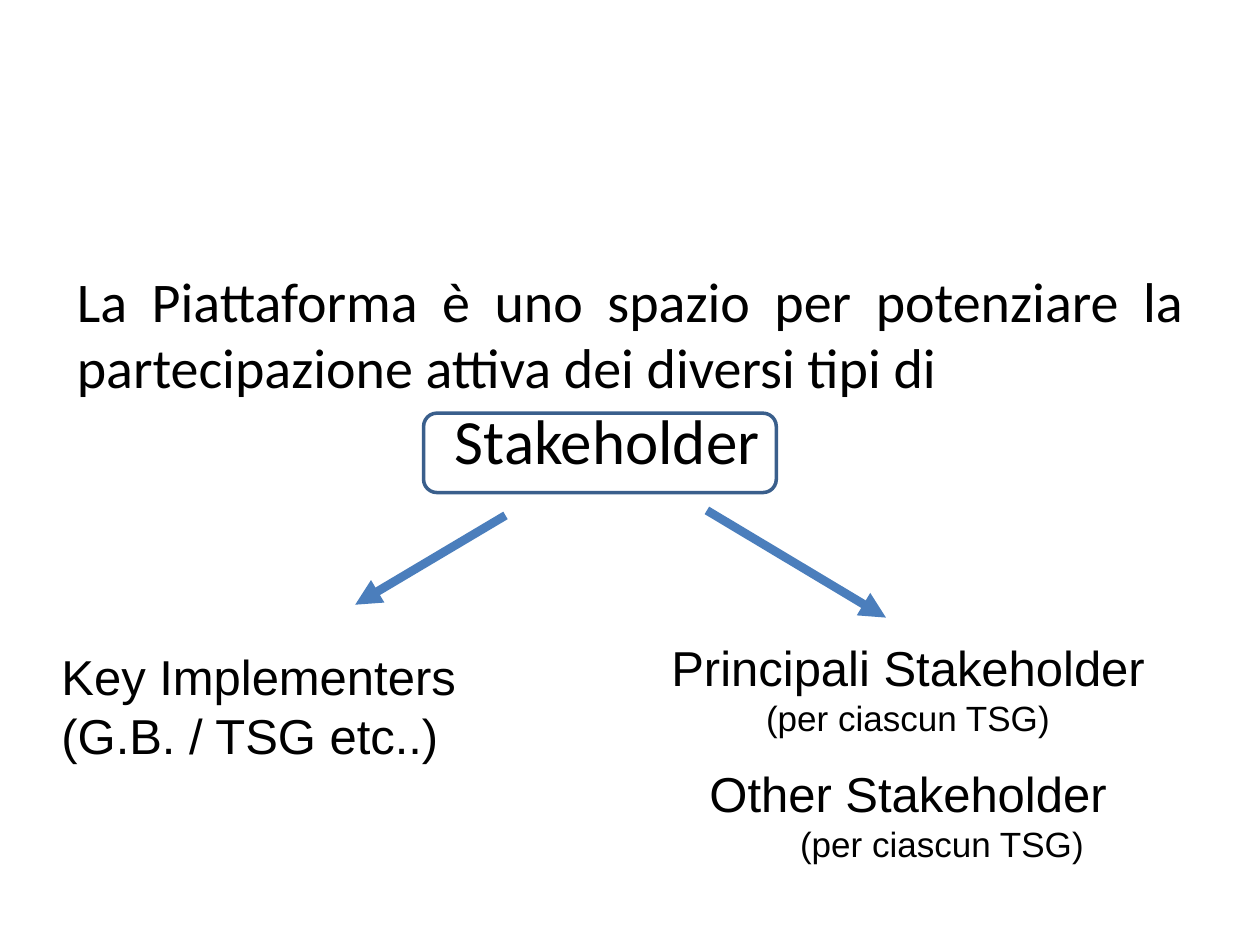
from lxml import etree
from pptx import Presentation
from pptx.dml.color import RGBColor
from pptx.enum.shapes import MSO_CONNECTOR, MSO_SHAPE
from pptx.enum.text import MSO_ANCHOR, PP_ALIGN
from pptx.oxml.ns import qn
from pptx.util import Cm, Pt

BLACK = RGBColor(0x00, 0x00, 0x00)
WHITE = RGBColor(0xFF, 0xFF, 0xFF)
ARROW_BLUE = RGBColor(0x4B, 0x7E, 0xBC)
FRAME_BLUE = RGBColor(0x3A, 0x5F, 0x8C)

LEFT, CENTER, JUSTIFY = PP_ALIGN.LEFT, PP_ALIGN.CENTER, PP_ALIGN.JUSTIFY
TOP, MIDDLE = MSO_ANCHOR.TOP, MSO_ANCHOR.MIDDLE
RECTANGLE, ROUNDED = MSO_SHAPE.RECTANGLE, MSO_SHAPE.ROUNDED_RECTANGLE
STRAIGHT = MSO_CONNECTOR.STRAIGHT


def add_frame(slide, box, kind, color, width):
    shape = slide.shapes.add_shape(kind, *map(Cm, box))
    shape.shadow.inherit = False
    shape.fill.background()
    shape.line.color.rgb = color
    shape.line.width = Pt(width)
    return shape


def write_paragraphs(text_frame, lines, font_name, alignment, anchor):
    text_frame.word_wrap = True
    text_frame.vertical_anchor = anchor
    for index, (text, size, space_before, indent) in enumerate(lines):
        paragraph = text_frame.paragraphs[0] if index == 0 else text_frame.add_paragraph()
        paragraph.text = text
        paragraph.alignment = alignment
        paragraph.space_before = Pt(space_before)
        if indent:
            properties = paragraph._p.get_or_add_pPr()
            properties.set("marL", str(Cm(indent)))
            properties.set("indent", "0")
        paragraph.font.name = font_name
        paragraph.font.size = Pt(size)
        paragraph.font.color.rgb = BLACK


def add_introduction(slide, box):
    left, top, width, height = box
    text_box = slide.shapes.add_textbox(*map(Cm, box))
    text_frame = text_box.text_frame
    text_frame.margin_left = text_frame.margin_right = Cm(0.25)
    text_frame.margin_top = text_frame.margin_bottom = Cm(0.25)
    lines = [
        ("La Piattaforma è uno spazio per potenziare la partecipazione attiva dei diversi tipi di", 32, 0, 0),
        ("Stakeholder", 36, 6, 7.62),
    ]
    write_paragraphs(text_frame, lines, "Calibri", JUSTIFY, TOP)
    for paragraph in text_frame.paragraphs:
        paragraph.line_spacing = Pt(38)
    add_frame(slide, (left + 7.24, top + 3.2, 7.11, 1.6), ROUNDED, FRAME_BLUE, 2)


def add_group_label(slide, box, lines, alignment):
    shape = add_frame(slide, box, RECTANGLE, WHITE, 0.75)
    write_paragraphs(shape.text_frame, lines, "Arial", alignment, MIDDLE)


def add_arrow(slide, box, to_left):
    left, top, width, height = box
    start, end = (left + width, left) if to_left else (left, left + width)
    arrow = slide.shapes.add_connector(STRAIGHT, Cm(start), Cm(top), Cm(end), Cm(top + height))
    arrow.line.color.rgb = ARROW_BLUE
    arrow.line.width = Pt(5)
    etree.SubElement(arrow.line._get_or_add_ln(), qn("a:tailEnd"), type="triangle")
    etree.SubElement(arrow._element.spPr, qn("a:effectLst"))


def main():
    presentation = Presentation()
    presentation.slide_width = Cm(25.4)
    presentation.slide_height = Cm(19.05)
    slide = presentation.slides.add_slide(presentation.slide_layouts[6])

    add_introduction(slide, (1.3, 5.13, 22.83, 5.41))
    stakeholders = [
        ("Principali Stakeholder", 28, 0, 0),
        ("(per ciascun TSG)", 20, 0, 0),
        ("Other Stakeholder", 28, 14, 0),
        ("(per ciascun TSG)", 20, 0, 1.37),
    ]
    add_group_label(slide, (12.5, 12.7, 11.61, 4.88), stakeholders, CENTER)
    implementers = [("Key Implementers (G.B. / TSG etc..)", 28, 0, 0)]
    add_group_label(slide, (0.99, 12.9, 10.41, 2.64), implementers, LEFT)
    add_arrow(slide, (7.16, 10.39, 3.03, 1.8), True)
    add_arrow(slide, (14.25, 10.29, 3.61, 2.16), False)

    presentation.save("out.pptx")


if __name__ == "__main__":
    main()
